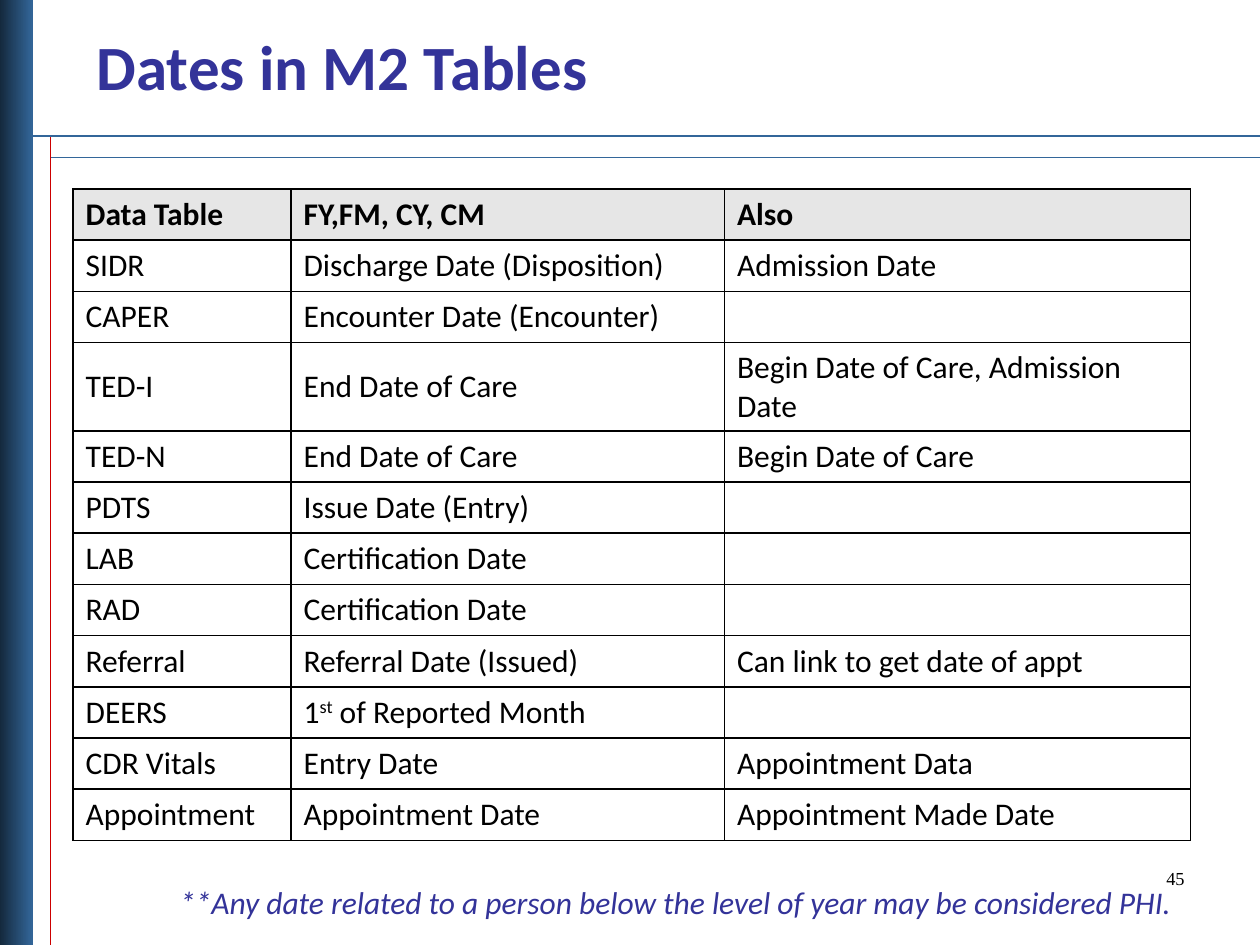
from lxml import etree
from pptx import Presentation
from pptx import util as u
from pptx.dml.color import RGBColor
from pptx.enum import shapes, text
from pptx.oxml.ns import qn

THEME = dict(
    font="Calibri", number_font="Times New Roman",
    title_size=36, body_size=18, number_size=10.5,
    ink="000000", accent="333399", blue="336699", navy="14293D",
    red="CC0000", header="E6E6E6",
)

TITLE = "Dates in M2 Tables"
FOOTNOTE = "**Any date related to a person below the level of year may be considered PHI."
PAGE = "45"
# A cell is a string, or a tuple of runs whose odd members are superscript
ROWS = [
    ("Data Table", "FY,FM, CY, CM", "Also"),
    ("SIDR", "Discharge Date (Disposition)", "Admission Date"),
    ("CAPER", "Encounter Date (Encounter)", ""),
    ("TED-I", "End Date of Care", "Begin Date of Care, Admission Date"),
    ("TED-N", "End Date of Care", "Begin Date of Care"),
    ("PDTS", "Issue Date (Entry)", ""),
    ("LAB", "Certification Date", ""),
    ("RAD", "Certification Date", ""),
    ("Referral", "Referral Date (Issued)", "Can link to get date of appt"),
    ("DEERS", ("1", "st", " of Reported Month"), ""),
    ("CDR Vitals", "Entry Date", "Appointment Data"),
    ("Appointment", "Appointment Date", "Appointment Made Date"),
]
COL_WIDTHS = (1.73, 3.44, 3.7)
TABLE_HEIGHT, TALL_ROW, TALL_HEIGHT = 5.17, 3, 0.7

# from, to, colour, width in points
RULES = [
    ((0.4, 1.25), (10, 1.25), "blue", 1),
    ((0.4, 1.08), (0.4, 7.5), "red", 0.75),
    ((0, 1.08), (10, 1.08), "blue", 1.5),
]


def rgb(name):
    return RGBColor.from_string(THEME[name])


def add_run(p, words, size="body_size", color="ink", font="font", bold=False, italic=False):
    r = p.add_run()
    r.text = words
    f = r.font
    f.name, f.size, f.bold, f.italic = THEME[font], u.Pt(THEME[size]), bold, italic
    f.color.rgb = rgb(color)
    return r


def add_text(s, box, words, anchor=text.MSO_ANCHOR.TOP, align=text.PP_ALIGN.LEFT, **style):
    tf = s.shapes.add_textbox(*map(u.Inches, box)).text_frame
    tf.word_wrap = True
    tf.vertical_anchor = anchor
    p = tf.paragraphs[0]
    p.alignment = align
    add_run(p, words, **style)


def add_rule(s, start, end, color, width):
    line = s.shapes.add_connector(shapes.MSO_CONNECTOR.STRAIGHT, *map(u.Inches, start + end))
    line.line.color.rgb = rgb(color)
    line.line.width = u.Pt(width)
    etree.SubElement(line._element.spPr, qn("a:effectLst"))


def set_borders(cell):
    tcPr = cell._tc.get_or_add_tcPr()
    for i, side in enumerate(("lnL", "lnR", "lnT", "lnB")):
        ln = etree.Element(qn("a:" + side), w=str(u.Pt(1)))
        fill = etree.SubElement(ln, qn("a:solidFill"))
        etree.SubElement(fill, qn("a:srgbClr"), val=THEME["ink"])
        tcPr.insert(i, ln)


def fill_cell(cell, content, header):
    cell.vertical_anchor = text.MSO_ANCHOR.MIDDLE
    if header:
        cell.fill.solid()
        cell.fill.fore_color.rgb = rgb("header")
    else:
        cell.fill.background()
    set_borders(cell)
    runs = (content,) if isinstance(content, str) else content
    for i, words in enumerate(runs):
        if words:
            r = add_run(cell.text_frame.paragraphs[0], words, bold=header)
            if i % 2:
                r._r.get_or_add_rPr().set("baseline", "30000")


def add_dates_table(s):
    box = map(u.Inches, (0.58, 1.5, sum(COL_WIDTHS), TABLE_HEIGHT))
    tbl = s.shapes.add_table(len(ROWS), len(COL_WIDTHS), *box).table
    tbl.horz_banding = False
    for col, width in zip(tbl.columns, COL_WIDTHS):
        col.width = u.Inches(width)
    row_height = (TABLE_HEIGHT - TALL_HEIGHT) / (len(ROWS) - 1)
    for i, row in enumerate(ROWS):
        tbl.rows[i].height = u.Inches(TALL_HEIGHT if i == TALL_ROW else row_height)
        for j, content in enumerate(row):
            fill_cell(tbl.cell(i, j), content, header=i == 0)


def main():
    prs = Presentation()
    prs.slide_width, prs.slide_height = u.Inches(10), u.Inches(7.5)
    s = prs.slides.add_slide(prs.slide_layouts[6])

    # Rules and side band
    for rule in RULES:
        add_rule(s, *rule)
    sp = s.shapes.add_shape(shapes.MSO_SHAPE.RECTANGLE, 0, 0, u.Inches(0.26), prs.slide_height)
    sp.shadow.inherit = False
    sp.line.fill.background()
    sp.fill.gradient()
    sp.fill.gradient_angle = 0
    for stop, color in zip(sp.fill.gradient_stops, ("navy", "blue")):
        stop.color.rgb = rgb(color)

    # Title, table, footnote and page number
    add_text(s, (0.67, 0.17, 7.33, 0.7), TITLE, anchor=text.MSO_ANCHOR.BOTTOM,
             size="title_size", color="accent", bold=True)
    add_dates_table(s)
    add_text(s, (1.33, 6.96, 8.33, 0.4), FOOTNOTE, color="accent", italic=True)
    add_text(s, (7.17, 6.83, 2.33, 0.52), PAGE, align=text.PP_ALIGN.RIGHT,
             size="number_size", font="number_font")

    prs.save("out.pptx")


if __name__ == "__main__":
    main()
